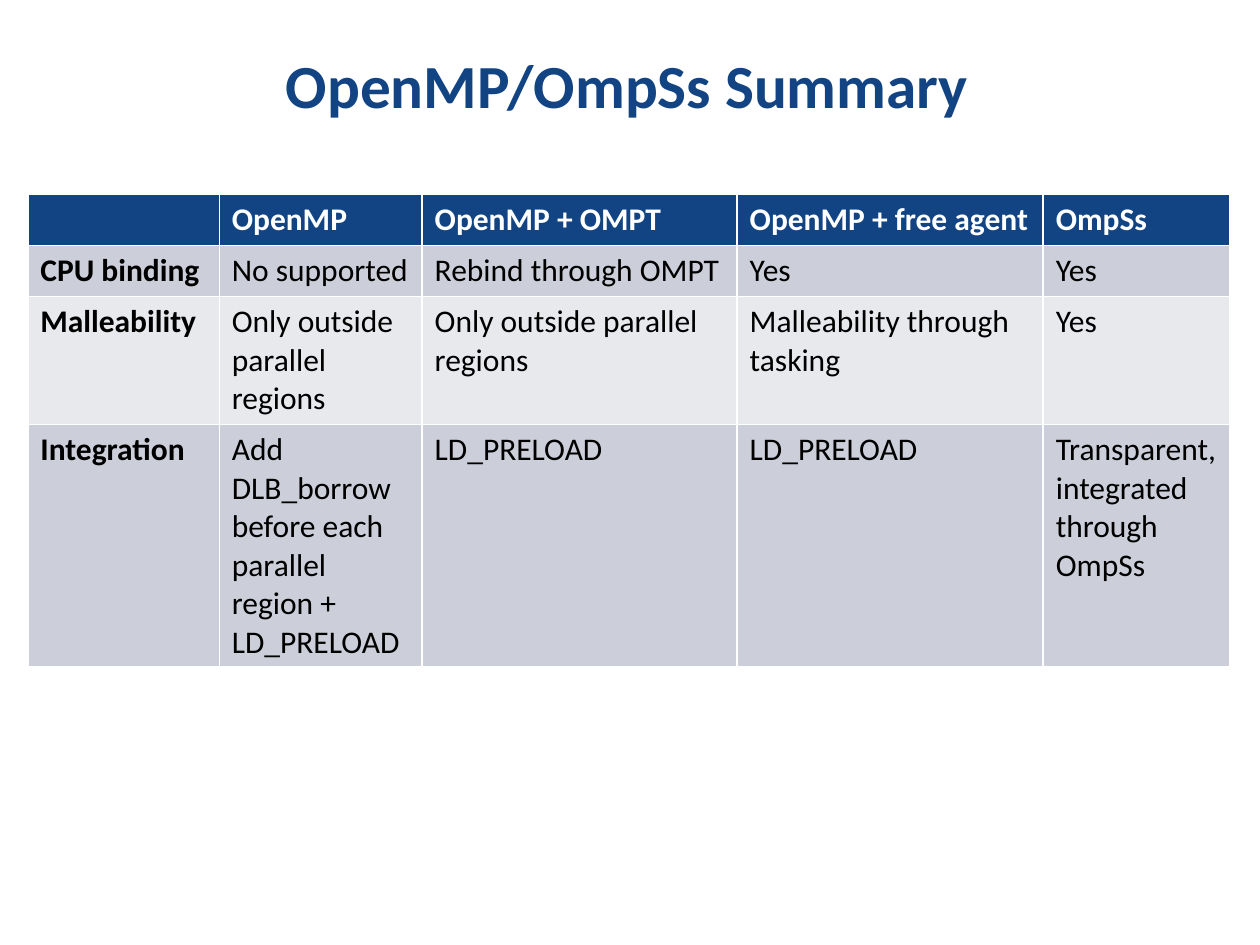
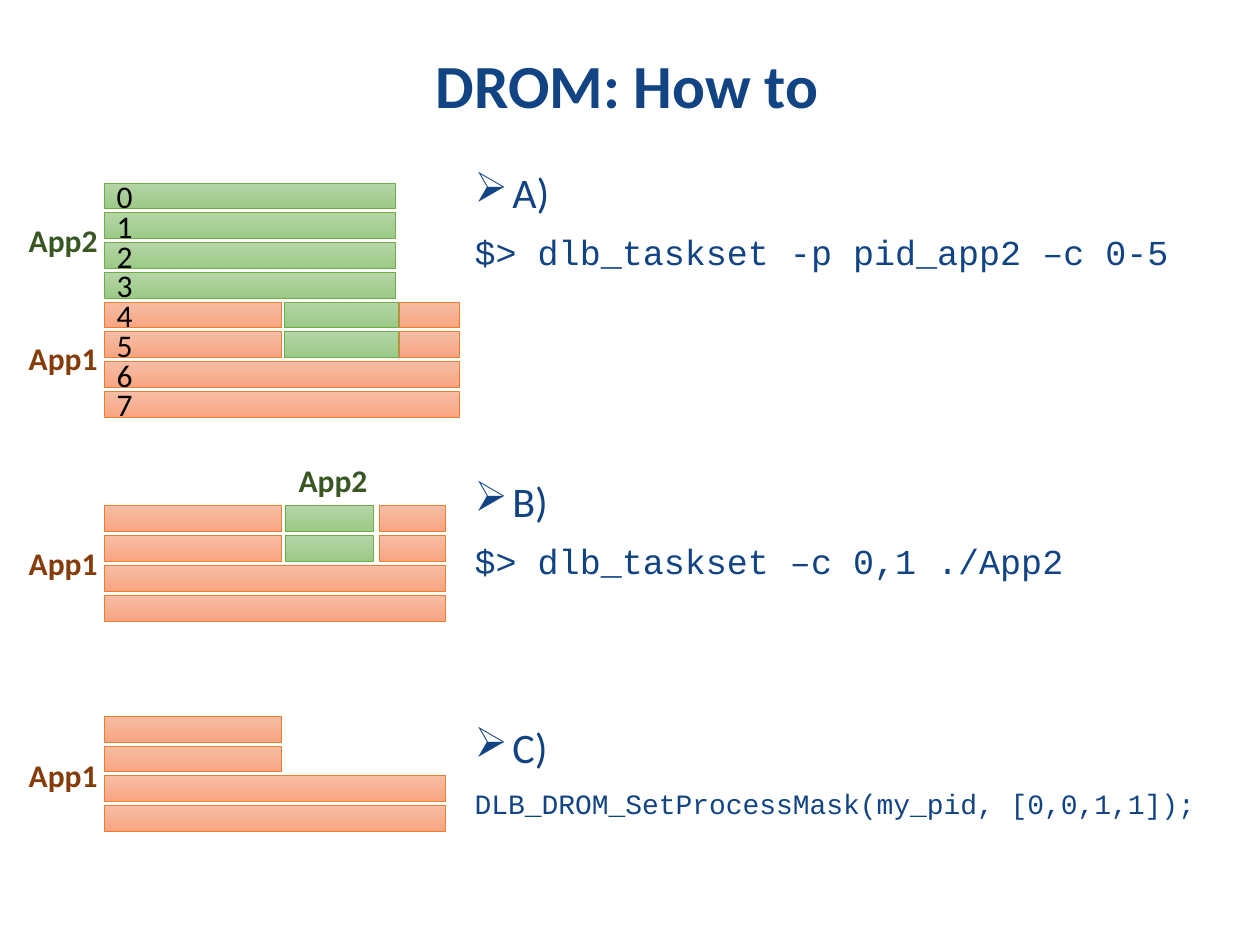
from lxml.etree import SubElement
from pptx import Presentation
from pptx.dml.color import RGBColor
from pptx.enum.shapes import MSO_SHAPE as Shape
from pptx.enum.text import MSO_ANCHOR as Anchor, PP_ALIGN as Align
from pptx.oxml.ns import qn
from pptx.util import Cm, Pt

# Shared look
NAVY = RGBColor(0x12, 0x44, 0x84)
WHITE = RGBColor(0xFF, 0xFF, 0xFF)
BLACK = RGBColor(0, 0, 0)
GREY = RGBColor(0xCC, 0xCF, 0xD9)
PALE = RGBColor(0xE7, 0xE9, 0xED)
MOSS = RGBColor(0x38, 0x57, 0x23)
BROWN = RGBColor(0x84, 0x3C, 0x0B)
# Each bar style: gradient top, gradient bottom, line
GREEN = (RGBColor(0xB5, 0xD5, 0xA7), RGBColor(0x9C, 0xC9, 0x87),
         RGBColor(0x70, 0xAD, 0x47))
PEACH = (RGBColor(0xF7, 0xBD, 0xA5), RGBColor(0xF8, 0xA5, 0x82),
         RGBColor(0xED, 0x7D, 0x31))
SANS, MONO = "Calibri", "Courier New"

# CPU bars, in cm
LEFT, STEP, THICK = 2.1, 0.6, 0.52

HEADS = ["", "OpenMP", "OpenMP + OMPT", "OpenMP + free agent", "OmpSs"]
ROWS = [
    ["CPU binding", "No supported", "Rebind through OMPT", "Yes", "Yes"],
    ["Malleability", "Only outside parallel regions",
     "Only outside parallel regions", "Malleability through tasking", "Yes"],
    ["Integration",
     "Add DLB_borrow before each parallel region + LD_PRELOAD",
     "LD_PRELOAD", "LD_PRELOAD", "Transparent, integrated through OmpSs"],
]
WIDTHS = [3.86, 4.09, 6.35, 6.17, 3.76]
HEIGHTS = [1.04, 1.03, 2.58, 4.88]

# Letter, space before it, command, command size
STEPS = [
    ("A)", 0, "$> dlb_taskset -p pid_app2 –c 0-5", 20),
    ("B)", 119, "$> dlb_taskset –c 0,1 ./App2", 20),
    ("C)", 83, "DLB_DROM_SetProcessMask(my_pid, [0,0,1,1]);", 16),
]


def style(para, size, color, bold=False, face=SANS):
    font = para.font
    font.name, font.size, font.bold = face, Pt(size), bold
    font.color.rgb = color


def add_box(slide, x, y, w, h):
    frame = slide.shapes.add_textbox(Cm(x), Cm(y), Cm(w), Cm(h)).text_frame
    frame.word_wrap = True
    return frame


def add_title(slide, text):
    frame = add_box(slide, 0.76, 0.61, 23.77, 2.34)
    frame.vertical_anchor = Anchor.MIDDLE
    para = frame.paragraphs[0]
    para.text, para.alignment, para.line_spacing = text, Align.CENTER, 0.9
    style(para, 35, NAVY, True)


def add_label(slide, text, color, y, x=0.33):
    para = add_box(slide, x, y, 2.13, 1.02).paragraphs[0]
    para.text = text
    style(para, 18, color, True)


def add_grid(slide):
    table = slide.shapes.add_table(
        len(ROWS) + 1, len(HEADS), Cm(0.56), Cm(3.91),
        Cm(sum(WIDTHS)), Cm(sum(HEIGHTS))).table
    for col, width in zip(table.columns, WIDTHS):
        col.width = Cm(width)
    for r, texts in enumerate([HEADS] + ROWS):
        table.rows[r].height = Cm(HEIGHTS[r])
        back = NAVY if r == 0 else GREY if r % 2 else PALE
        for c, text in enumerate(texts):
            cell = table.cell(r, c)
            cell.fill.solid()
            cell.fill.fore_color.rgb = back
            para = cell.text_frame.paragraphs[0]
            para.text = text
            style(para, 18, BLACK if r else WHITE, r == 0 or c == 0)


def add_bar(slide, look, x, y, width, text=""):
    bar = slide.shapes.add_shape(
        Shape.RECTANGLE, Cm(x), Cm(y), Cm(width), Cm(THICK))
    bar.shadow.inherit = False
    bar.fill.gradient()
    bar.fill.gradient_angle = 270
    for stop, color in zip(bar.fill.gradient_stops, look):
        stop.color.rgb = color
    bar.line.color.rgb = look[2]
    bar.line.width = Pt(0.5)
    if text:
        frame = bar.text_frame
        frame.margin_top = frame.margin_bottom = 0
        frame.vertical_anchor = Anchor.MIDDLE
        para = frame.paragraphs[0]
        para.text, para.alignment = text, Align.LEFT
        style(para, 18, BLACK)


def add_stack(slide, top, rows, count=False):
    """Draw one row of bars per CPU, numbered if count is set."""
    for n, row in enumerate(rows):
        for k, (look, x, width) in enumerate(row):
            text = str(n) if count and k == 0 else ""
            add_bar(slide, look, x, top + n * STEP, width, text)


def add_bullet(para):
    props = para._p.get_or_add_pPr()
    props.set("marL", str(Cm(0.76)))
    props.set("indent", str(-Cm(0.76)))
    SubElement(props, qn("a:buChar")).set("char", "➢")


def add_steps(slide):
    frame = add_box(slide, 9.32, 3.35, 15.88, 14.15)
    for n, (mark, gap, code, size) in enumerate(STEPS):
        head = frame.add_paragraph() if n else frame.paragraphs[0]
        head.text, head.line_spacing = mark, 0.9
        head.space_before = Pt(gap)
        add_bullet(head)
        style(head, 24, NAVY)
        line = frame.add_paragraph()
        line.text, line.line_spacing = code, 0.9
        line.space_before = Pt(10)
        style(line, size, NAVY, face=MONO)


def main():
    deck = Presentation()
    deck.slide_width, deck.slide_height = Cm(25.4), Cm(19.05)
    blank = deck.slide_layouts[6]

    # Summary table
    slide = deck.slides.add_slide(blank)
    add_title(slide, "OpenMP/OmpSs Summary")
    add_grid(slide)

    # DROM examples
    slide = deck.slides.add_slide(blank)
    add_title(slide, "DROM: How to")
    short = (PEACH, LEFT, 3.58)
    full = [(PEACH, LEFT, 6.88)]

    # A) a running application grows
    own = [(GREEN, LEFT, 5.87)]
    lent = [short, (GREEN, 5.73, 2.31), (PEACH, 8.05, 1.22)]
    wide = [(PEACH, LEFT, 7.16)]
    add_stack(slide, 3.69, [own] * 4 + [lent] * 2 + [wide] * 2, True)
    add_label(slide, "App2", MOSS, 4.34)
    add_label(slide, "App1", BROWN, 6.71)

    # B) a new application starts
    split = [short, (GREEN, 5.75, 1.78), (PEACH, 7.66, 1.32)]
    add_stack(slide, 10.2, [split] * 2 + [full] * 2)
    add_label(slide, "App2", MOSS, 9.17, 5.77)
    add_label(slide, "App1", BROWN, 10.85)

    # C) an application shrinks itself
    add_stack(slide, 14.44, [[short]] * 2 + [full] * 2)
    add_label(slide, "App1", BROWN, 15.11)

    add_steps(slide)
    deck.save("out.pptx")


if __name__ == "__main__":
    main()
